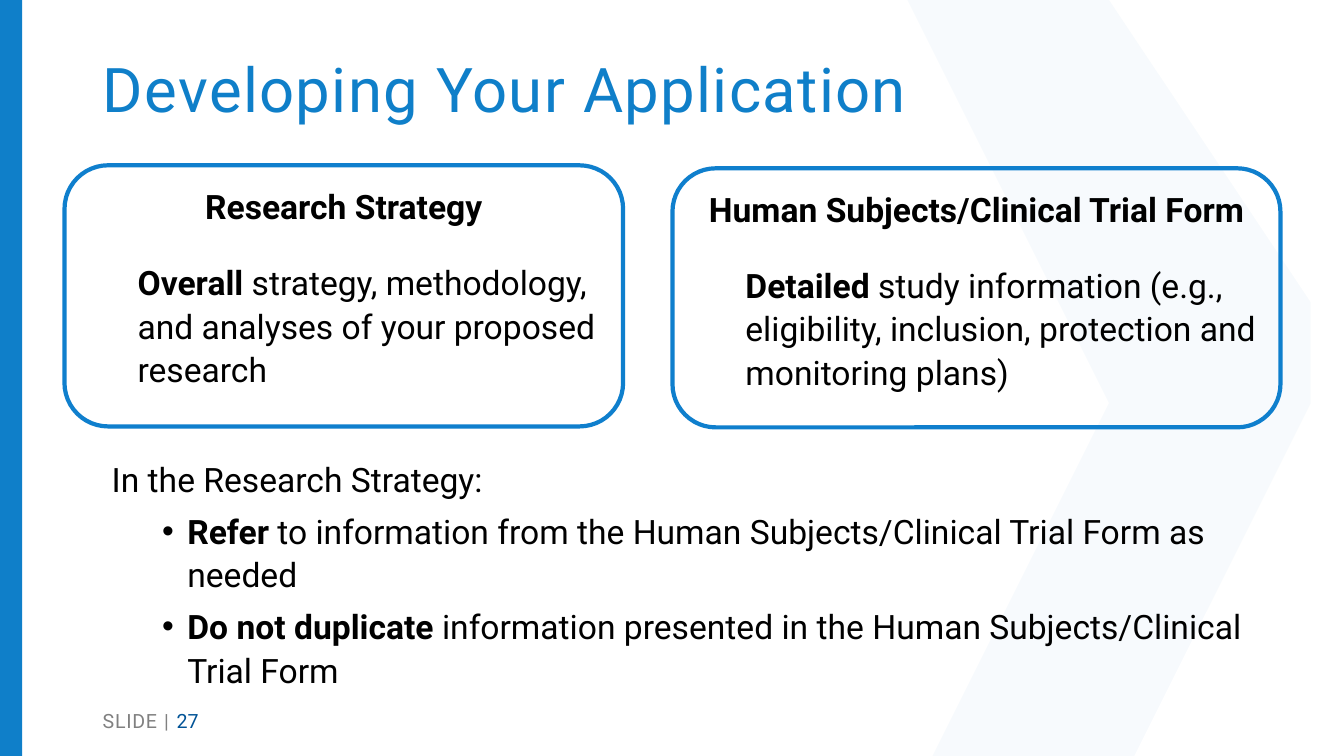
from lxml import etree
from pptx import Presentation
from pptx.dml.color import RGBColor
from pptx.enum.shapes import MSO_SHAPE
from pptx.enum.text import MSO_ANCHOR, PP_ALIGN
from pptx.oxml.ns import qn
from pptx.util import Inches, Pt

RECT, ROUND_RECT = MSO_SHAPE.RECTANGLE, MSO_SHAPE.ROUNDED_RECTANGLE
TOP, MIDDLE = MSO_ANCHOR.TOP, MSO_ANCHOR.MIDDLE
LEFT, CENTER = PP_ALIGN.LEFT, PP_ALIGN.CENTER

BLUE = RGBColor(0x0F, 0x7F, 0xC9)
CARD_BLUE = RGBColor(0x0F, 0x7F, 0xCD)
NUMBER_BLUE = RGBColor(0x01, 0x53, 0x96)
GRAY = RGBColor(0x80, 0x80, 0x80)
BLACK = RGBColor(0, 0, 0)
FONT = "Roboto"
SLIDE_W, SLIDE_H = 13.33, 7.5

CARDS = [
    ((0.64, 1.64, 5.54, 2.59), "Research Strategy", "Overall",
     " strategy, methodology, and analyses of your proposed research"),
    ((6.67, 1.67, 6.03, 2.57), "Human Subjects/Clinical Trial Form", "Detailed",
     " study information (e.g., eligibility, inclusion, protection and monitoring plans)"),
]
ADVICE = [
    ("Refer", " to information from the Human Subjects/Clinical Trial Form as needed"),
    ("Do not duplicate", " information presented in the Human Subjects/Clinical Trial Form"),
]


def inches(box):
    """Convert a box in inches to lengths."""
    return [Inches(v) for v in box]


def add_run(p, text, size=24, color=BLACK, bold=False, spacing=0):
    """Append a formatted run, with letter spacing in points."""
    r = p.add_run()
    r.text = text
    r.font.name, r.font.size, r.font.bold = FONT, Pt(size), bold
    r.font.color.rgb = color
    if spacing:
        r._r.get_or_add_rPr().set("spc", str(int(spacing * 100)))


def format_paragraph(p, align=LEFT, before=0, after=0, margin=0, indent=0, bullet=None):
    """Set spacing, indents and an optional bullet."""
    p.alignment, p.line_spacing = align, 1.08
    p.space_before, p.space_after = Pt(before), Pt(after)
    pPr = p._p.get_or_add_pPr()
    pPr.set("marL", str(Inches(margin)))
    pPr.set("indent", str(Inches(indent)))
    if bullet:
        etree.SubElement(pPr, qn("a:buFont")).set("typeface", "Arial")
        etree.SubElement(pPr, qn("a:buChar")).set("char", bullet)


def add_text_frame(slide, box, anchor=TOP):
    """Add a wrapping text box and return its text frame."""
    tf = slide.shapes.add_textbox(*inches(box)).text_frame
    tf.word_wrap, tf.vertical_anchor = True, anchor
    return tf


def fill_plain(sp, color):
    """Give a shape a flat fill without line or shadow."""
    sp.shadow.inherit = False
    sp.fill.solid()
    sp.fill.fore_color.rgb = color
    sp.line.fill.background()


def add_background(slide, box):
    """Draw the pale chevron and the bar at the left edge."""
    x, y, w, h = box
    right, outer, inner = x + w, x + w - 4.18, x + w - 1.88
    fb = slide.shapes.build_freeform(outer, y, scale=Inches(1))
    fb.add_line_segments([(inner, y), (right, y + 3.07), (right, y + h - 3.07),
                          (inner, y + h), (outer, y + h), (inner, y + h / 2)])
    chevron = fb.convert_to_shape()
    fill_plain(chevron, BLUE)
    color = chevron._element.spPr.find(qn("a:solidFill"))[0]
    etree.SubElement(color, qn("a:alpha")).set("val", "3000")
    bar = slide.shapes.add_shape(RECT, *inches((x, y, 0.22, h)))
    fill_plain(bar, BLUE)


def add_title(slide, box, text):
    """Place and format the title placeholder."""
    title = slide.shapes.title
    title.left, title.top, title.width, title.height = inches(box)
    tf = title.text_frame
    tf.word_wrap, tf.vertical_anchor = True, MIDDLE
    p = tf.paragraphs[0]
    p.alignment, p.line_spacing = LEFT, 0.9
    add_run(p, text, 44, BLUE, spacing=1)


def add_card(slide, box, heading, lead, detail):
    """Draw an outlined card with a heading and an indented description."""
    sp = slide.shapes.add_shape(ROUND_RECT, *inches(box))
    sp.shadow.inherit = False
    sp.fill.background()
    sp.line.color.rgb, sp.line.width = CARD_BLUE, Pt(3)
    tf = sp.text_frame
    tf.word_wrap, tf.vertical_anchor = True, TOP
    p = tf.paragraphs[0]
    format_paragraph(p, CENTER, after=18)
    add_run(p, heading, bold=True)
    p = tf.add_paragraph()
    p.level = 1
    format_paragraph(p, before=5, margin=0.5)
    add_run(p, lead, bold=True)
    add_run(p, detail)


def add_advice(slide, box, intro, items):
    """Write the introduction and its bulleted advice."""
    tf = add_text_frame(slide, box)
    p = tf.paragraphs[0]
    format_paragraph(p)
    add_run(p, intro)
    for lead, rest in items:
        p = tf.add_paragraph()
        p.level = 1
        format_paragraph(p, before=6, margin=0.75, indent=-0.25, bullet="•")
        add_run(p, lead, bold=True)
        add_run(p, rest)


def add_footer(slide, box, number):
    """Write the slide number line."""
    p = add_text_frame(slide, box, MIDDLE).paragraphs[0]
    add_run(p, "SLIDE", 14, GRAY, spacing=0.5)
    add_run(p, " | ", 14, GRAY, spacing=1)
    add_run(p, number, 14, NUMBER_BLUE)


def main():
    """Build and save the slide."""
    prs = Presentation()
    prs.slide_width, prs.slide_height = Inches(SLIDE_W), Inches(SLIDE_H)
    slide = prs.slides.add_slide(prs.slide_layouts[5])
    add_background(slide, (0, 0, SLIDE_W, SLIDE_H))
    add_title(slide, (0.92, 0.19, 11.5, 1.45), "Developing Your Application")
    for card in CARDS:
        add_card(slide, *card)
    add_advice(slide, (1.01, 4.47, 11.69, 2.42), "In the Research Strategy:", ADVICE)
    add_footer(slide, (0.92, 6.95, 3, 0.4), "27")
    prs.save("out.pptx")


if __name__ == "__main__":
    main()
